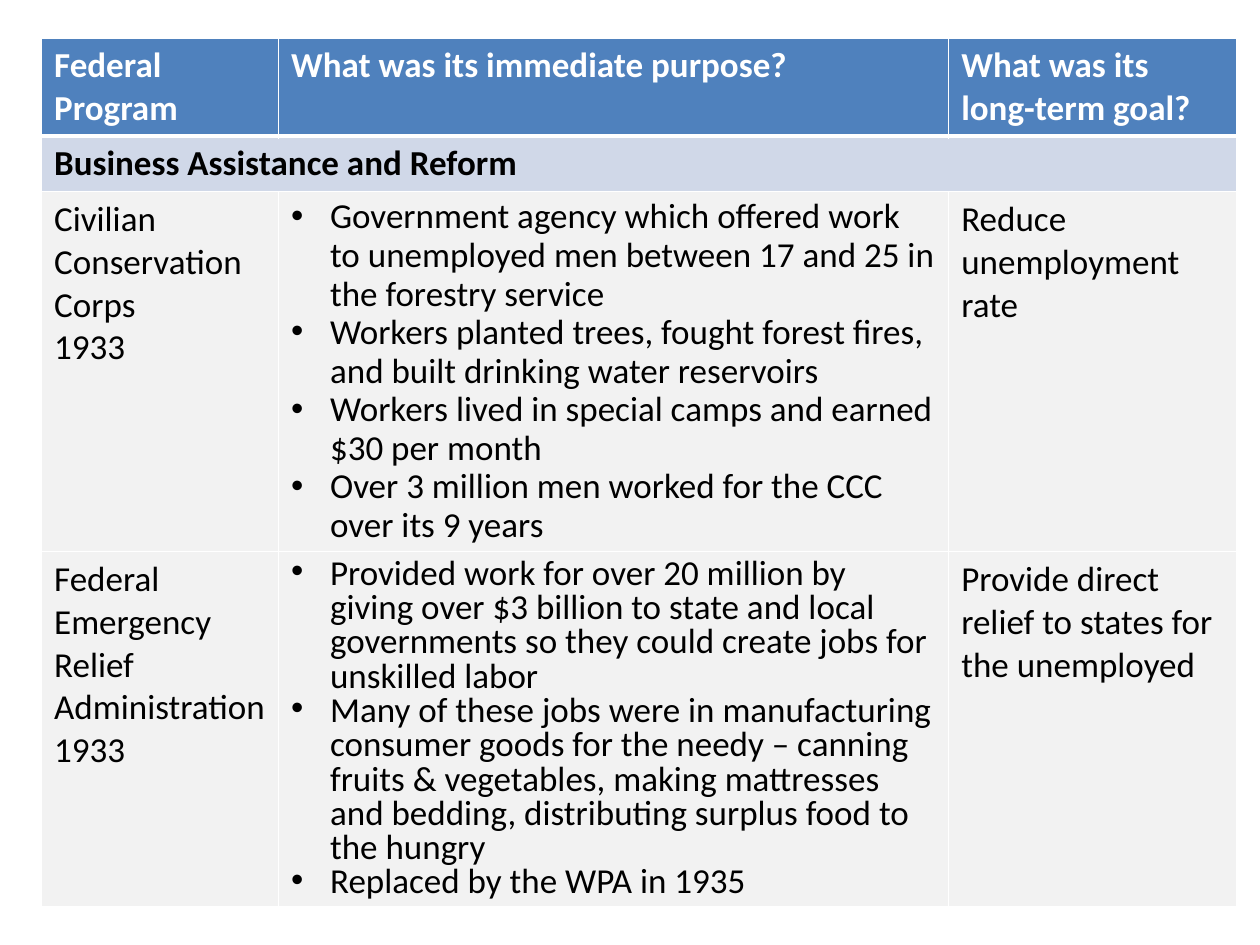
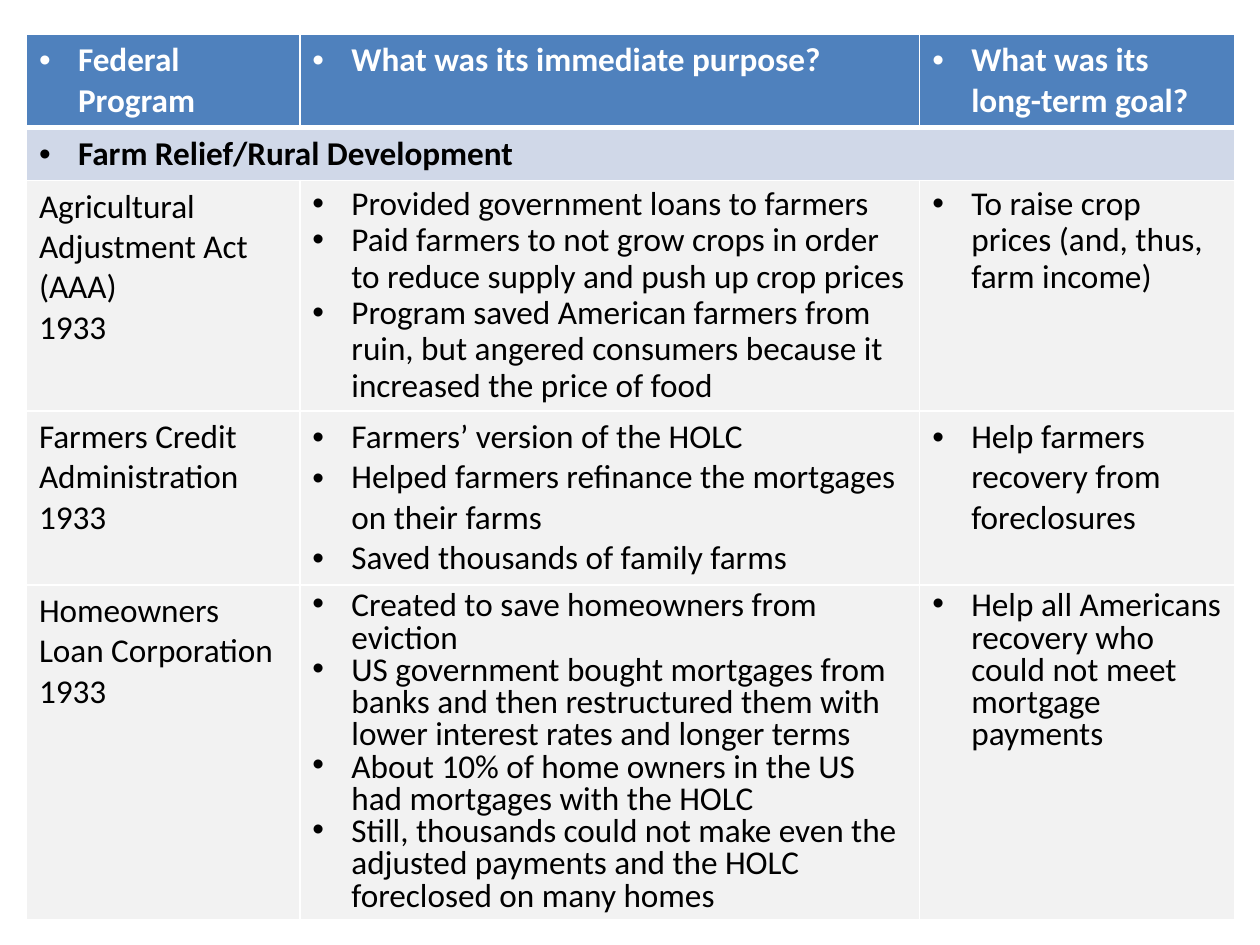
from lxml import etree
from pptx import Presentation
from pptx.dml.color import RGBColor
from pptx.oxml.ns import qn
from pptx.util import Inches, Pt

# Content: each program is (name, year, purposes, goal, line spacing, row height)
HEADINGS = ["Federal Program", "What was its immediate purpose?",
            "What was its long-term goal?"]
SECTIONS = [
    {
        "title": "Business Assistance and Reform",
        "origin": (0.33, 0.3), "columns": (1.88, 5.32, 2.29),
        "top_rows": (0.75, 0.42), "size": 20, "bullets_everywhere": False,
        "programs": [
            ("Civilian Conservation Corps", "1933", [
                "Government agency which offered work to unemployed men between 17 and 25 "
                "in the forestry service",
                "Workers planted trees, fought forest fires, and built drinking water reservoirs",
                "Workers lived in special camps and earned $30 per month",
                "Over 3 million men worked for the CCC over its 9 years",
            ], "Reduce unemployment rate", 0.9, 2.84),
            ("Federal Emergency Relief Administration", "1933", [
                "Provided work for over 20 million by giving over $3 billion to state and local "
                "governments so they could create jobs for unskilled labor",
                "Many of these jobs were in manufacturing consumer goods for the needy – canning "
                "fruits & vegetables, making mattresses and bedding, distributing surplus food "
                "to the hungry",
                "Replaced by the WPA in 1935",
            ], "Provide direct relief to states for the unemployed", 0.8, 2.8),
        ],
    },
    {
        "title": "Farm Relief/Rural Development",
        "origin": (0.21, 0.27), "columns": (2.17, 4.92, 2.5),
        "top_rows": (0.72, 0.41), "size": 19, "bullets_everywhere": True,
        "programs": [
            ("Agricultural Adjustment Act (AAA)", "1933", [
                "Provided government loans to farmers",
                "Paid farmers to not grow crops in order to reduce supply and push up crop prices",
                "Program saved American farmers from ruin, but angered consumers because it "
                "increased the price of food",
            ], "To raise crop prices (and, thus, farm income)", 0.9, 1.81),
            ("Farmers Credit Administration", "1933", [
                "Farmers’ version of the HOLC",
                "Helped farmers refinance the mortgages on their farms",
                "Saved thousands of family farms",
            ], "Help farmers recovery from foreclosures", 1.0, 1.36),
            ("Homeowners Loan Corporation", "1933", [
                "Created to save homeowners from eviction",
                "US government bought mortgages from banks and then restructured them with "
                "lower interest rates and longer terms",
                "About 10% of home owners in the US had mortgages with the HOLC",
                "Still, thousands could not make even the adjusted payments and the HOLC "
                "foreclosed on many homes",
            ], "Help all Americans recovery who could not meet mortgage payments", 0.8, 2.64),
        ],
    },
]

# Shared look
FONT = "Calibri"
WHITE, BLACK = "FFFFFF", "000000"
HEADER_FILL, SECTION_FILL, PROGRAM_FILL = "4F81BD", "D0D8E8", "F2F2F2"
BULLET_INDENT = Inches(0.31)
THIN, THICK = 1, 3


def color(hex_code):
    return RGBColor.from_string(hex_code)


def add_bullet(paragraph):
    properties = paragraph._p.get_or_add_pPr()
    properties.set("marL", str(BULLET_INDENT))
    properties.set("indent", str(-BULLET_INDENT))
    etree.SubElement(properties, qn("a:buFont"), typeface="Arial")
    etree.SubElement(properties, qn("a:buChar"), char="•")


def set_borders(cell, top=THIN, bottom=THIN):
    properties = cell._tc.get_or_add_tcPr()
    widths = {"a:lnL": THIN, "a:lnR": THIN, "a:lnT": top, "a:lnB": bottom}
    for position, (side, width) in enumerate(widths.items()):
        line = etree.Element(qn(side), w=str(Pt(width)))
        solid = etree.SubElement(line, qn("a:solidFill"))
        etree.SubElement(solid, qn("a:srgbClr"), val=WHITE)
        properties.insert(position, line)


def write(cell, lines, size, fill, ink=BLACK, bold=False, bullets=False, spacing=1.0):
    cell.fill.solid()
    cell.fill.fore_color.rgb = color(fill)
    frame = cell.text_frame
    for number, line in enumerate(lines):
        paragraph = frame.add_paragraph() if number else frame.paragraphs[0]
        if bullets:
            add_bullet(paragraph)
        if spacing != 1.0:
            paragraph.line_spacing = spacing
        run = paragraph.add_run()
        run.text = line
        run.font.name, run.font.size, run.font.bold = FONT, Pt(size), bold
        run.font.color.rgb = color(ink)


def add_program_table(slide, section):
    programs, size = section["programs"], section["size"]
    bullets = section["bullets_everywhere"]
    columns = section["columns"]
    heights = [*section["top_rows"], *(program[-1] for program in programs)]
    left, top = section["origin"]
    table = slide.shapes.add_table(
        len(heights), len(columns), Inches(left), Inches(top),
        Inches(sum(columns)), Inches(sum(heights))).table
    for column, width in zip(table.columns, columns):
        column.width = Inches(width)
    for row, height in zip(table.rows, heights):
        row.height = Inches(height)

    # Header and section band
    for cell, heading in zip(table.rows[0].cells, HEADINGS):
        write(cell, [heading], size, HEADER_FILL, ink=WHITE, bold=True, bullets=bullets)
    table.cell(1, 0).merge(table.cell(1, len(columns) - 1))
    write(table.cell(1, 0), [section["title"]], size, SECTION_FILL, bold=True, bullets=bullets)

    # Programs
    for row, (name, year, purposes, goal, spacing, _) in enumerate(programs, start=2):
        write(table.cell(row, 0), [name, year], size, PROGRAM_FILL)
        write(table.cell(row, 1), purposes, size, PROGRAM_FILL, bullets=True, spacing=spacing)
        write(table.cell(row, 2), [goal], size, PROGRAM_FILL, bullets=bullets,
              spacing=spacing if bullets else 1.0)

    # White rules, thicker under the header
    for number, row in enumerate(table.rows):
        for cell in row.cells:
            set_borders(cell, top=THICK if number == 1 else THIN,
                        bottom=THICK if number == 0 else THIN)


def main():
    deck = Presentation()
    deck.slide_width, deck.slide_height = Inches(10), Inches(7.5)
    blank = deck.slide_layouts[6]
    for section in SECTIONS:
        add_program_table(deck.slides.add_slide(blank), section)
    deck.save("out.pptx")


if __name__ == "__main__":
    main()
